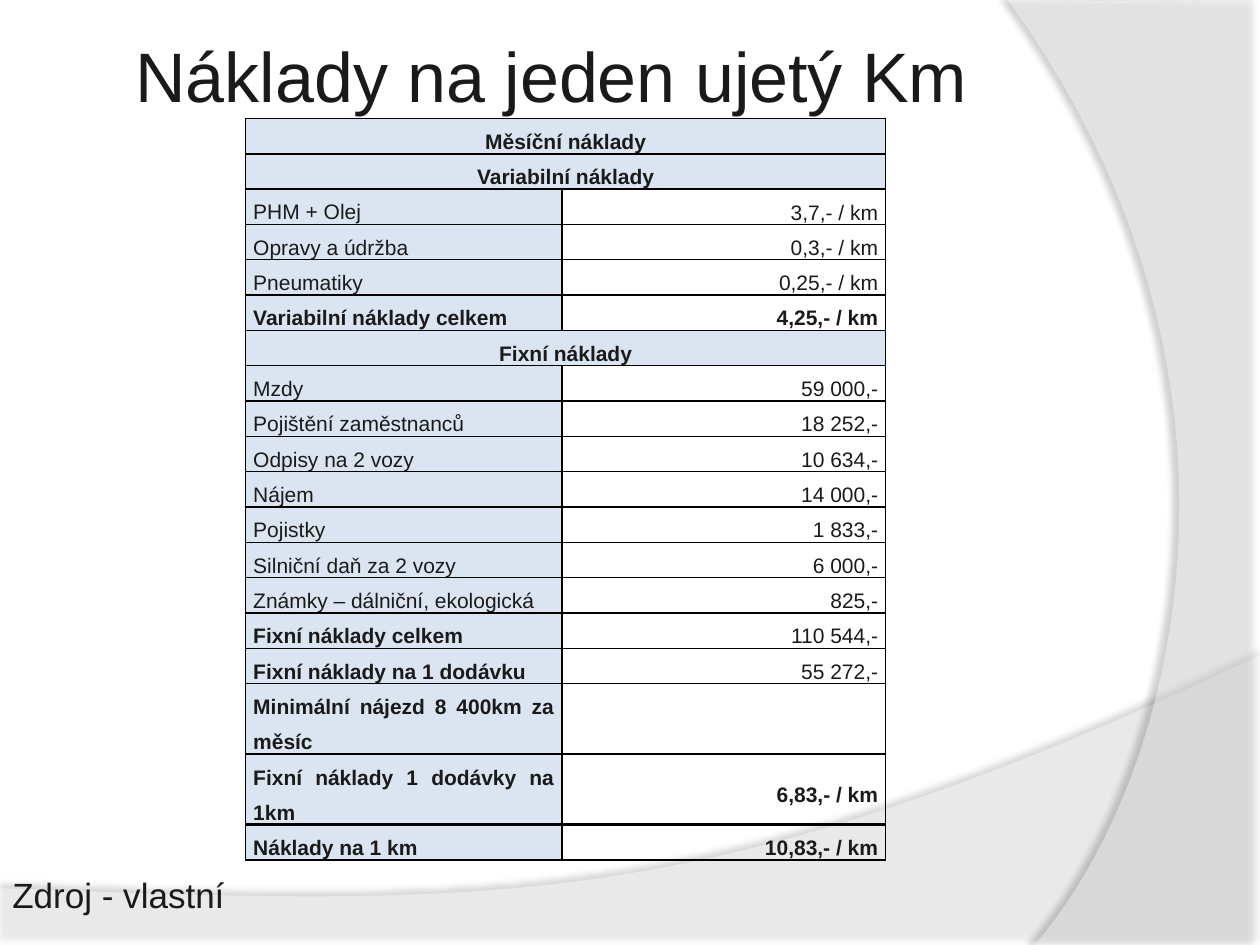
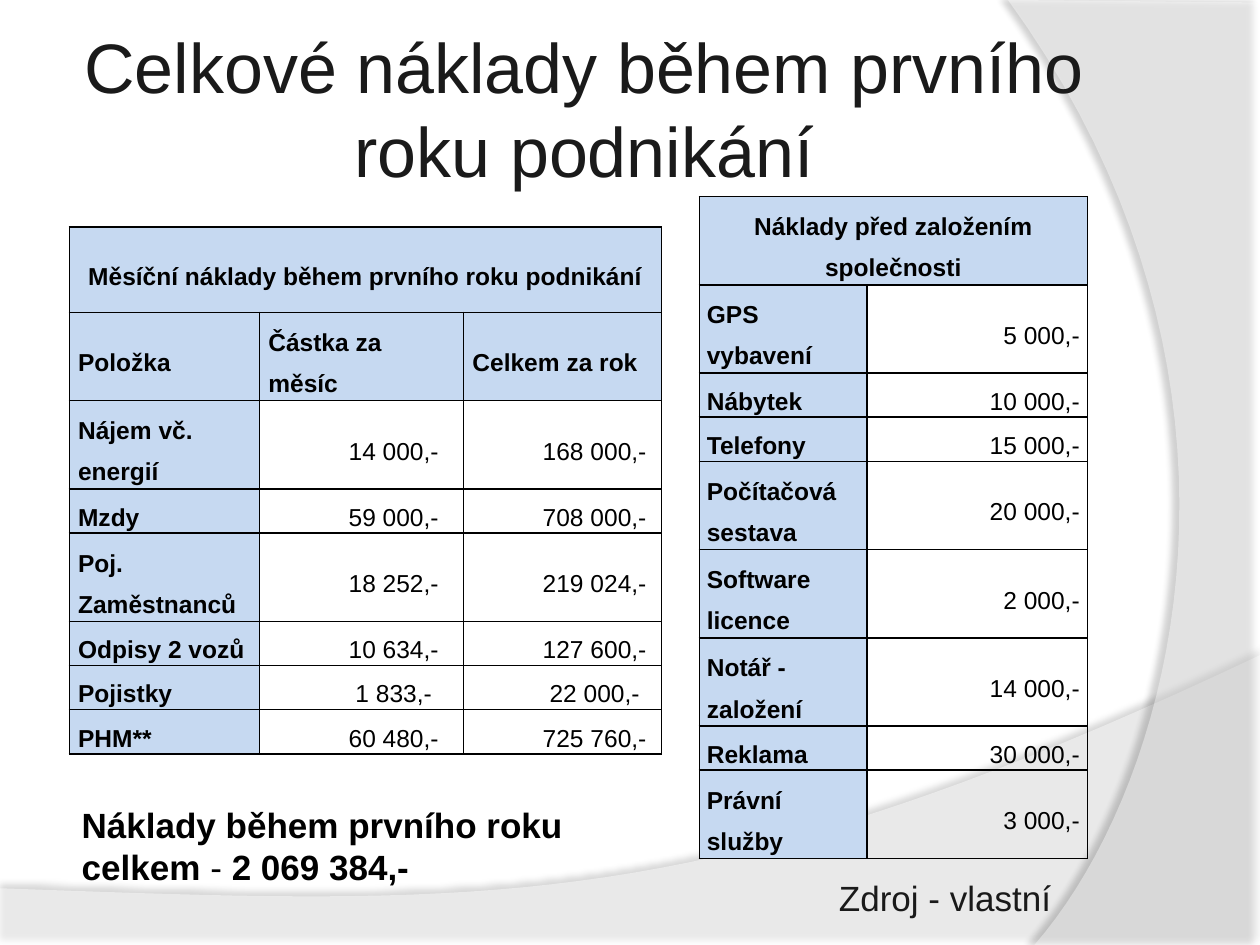
from dataclasses import dataclass

from lxml import etree
from pptx import Presentation
from pptx import util as u
from pptx.dml.color import RGBColor
from pptx.enum import text as t
from pptx.oxml import ns

FONT = "Arial"
INK = RGBColor(0x1A, 0x1A, 0x1A)
BLACK = RGBColor(0x00, 0x00, 0x00)
WHITE = RGBColor(0xFF, 0xFF, 0xFF)
PALE_BLUE = RGBColor(0xDB, 0xE5, 0xF1)
LIGHT_BLUE = RGBColor(0xC6, 0xD9, 0xF1)

LEFT, CENTER, RIGHT, JUSTIFY = (
    t.PP_ALIGN.LEFT, t.PP_ALIGN.CENTER, t.PP_ALIGN.RIGHT, t.PP_ALIGN.JUSTIFY)
TOP, MIDDLE = t.MSO_ANCHOR.TOP, t.MSO_ANCHOR.MIDDLE

SOURCE_NOTE = "Zdroj - vlastní"

# A row with one text is a heading across the whole table.
KM_COSTS = [
    ["Měsíční náklady"],
    ["Variabilní náklady"],
    ["PHM + Olej", "3,7,- / km"],
    ["Opravy a údržba", "0,3,- / km"],
    ["Pneumatiky", "0,25,- / km"],
    ["Variabilní náklady celkem", "4,25,- / km"],
    ["Fixní náklady"],
    ["Mzdy", "59 000,-"],
    ["Pojištění zaměstnanců", "18 252,-"],
    ["Odpisy na 2 vozy", "10 634,-"],
    ["Nájem", "14 000,-"],
    ["Pojistky", "1 833,-"],
    ["Silniční daň za 2 vozy", "6 000,-"],
    ["Známky – dálniční, ekologická", "825,-"],
    ["Fixní náklady celkem", "110 544,-"],
    ["Fixní náklady na 1 dodávku", "55 272,-"],
    ["Minimální nájezd 8 400km za měsíc", ""],
    ["Fixní náklady 1 dodávky na 1km", "6,83,- / km"],
    ["Náklady na 1 km", "10,83,- / km"],
]
YEAR_COSTS = [
    ["Měsíční náklady během prvního roku podnikání"],
    ["Položka", "Částka za měsíc", "Celkem za rok"],
    ["Nájem vč. energií", "14 000,-", "168 000,-"],
    ["Mzdy", "59 000,-", "708 000,-"],
    ["Poj. Zaměstnanců", "18 252,-", "219 024,-"],
    ["Odpisy 2 vozů", "10 634,-", "127 600,-"],
    ["Pojistky", "1 833,-", "22 000,-"],
    ["PHM**", "60 480,-", "725 760,-"],
]
STARTUP_COSTS = [
    ["Náklady před založením společnosti"],
    ["GPS vybavení", "5 000,-"],
    ["Nábytek", "10 000,-"],
    ["Telefony", "15 000,-"],
    ["Počítačová sestava", "20 000,-"],
    ["Software licence", "2 000,-"],
    ["Notář - založení", "14 000,-"],
    ["Reklama", "30 000,-"],
    ["Právní služby", "3 000,-"],
]


@dataclass
class TableStyle:
    size: int
    color: RGBColor
    fill: RGBColor
    margin: float
    label_align: t.PP_ALIGN
    label_anchor: t.MSO_ANCHOR
    value_align: t.PP_ALIGN
    value_indent: float = 0


KM_STYLE = TableStyle(12, INK, PALE_BLUE, 0.06, JUSTIFY, TOP, RIGHT)
YEAR_STYLE = TableStyle(14, BLACK, LIGHT_BLUE, 0.07, LEFT, MIDDLE, CENTER, 0.51)
STARTUP_STYLE = TableStyle(14, BLACK, LIGHT_BLUE, 0.06, LEFT, MIDDLE, RIGHT, 0.51)


def add_run(paragraph, text, size, color, bold=False):
    run = paragraph.add_run()
    run.text = text
    run.font.name = FONT
    run.font.size = u.Pt(size)
    run.font.bold = bold
    run.font.color.rgb = color


# Shared background
def curve(start, control_1, control_2, end, steps=40):
    """Points of a cubic curve, without its start."""
    points = []
    for step in range(1, steps + 1):
        k = step / steps
        weights = ((1 - k) ** 3, 3 * k * (1 - k) ** 2, 3 * k * k * (1 - k), k ** 3)
        corners = (start, control_1, control_2, end)
        points.append(tuple(sum(w * corner[axis] for w, corner in zip(weights, corners))
                            for axis in (0, 1)))
    return points


def add_swoosh(slide, points, opacity, shadow_opacity, distance, direction):
    (start, *others) = [(u.Inches(x), u.Inches(y)) for x, y in points]
    builder = slide.shapes.build_freeform(*start, scale=1.0)
    builder.add_line_segments(others, close=True)
    shape = builder.convert_to_shape()
    shape.shadow.inherit = False
    shape.line.fill.background()
    shape.fill.solid()
    shape.fill.fore_color.rgb = WHITE
    properties = shape.element.spPr
    set_opacity(properties.find(".//" + ns.qn("a:srgbClr")), opacity)
    shadow = etree.SubElement(
        properties.find(ns.qn("a:effectLst")), ns.qn("a:outerShdw"),
        blurRad=str(u.Pt(4)), dist=str(u.Pt(distance)), dir=str(direction * 60000),
        algn="ctr", rotWithShape="0")
    set_opacity(etree.SubElement(shadow, ns.qn("a:srgbClr"), val=str(BLACK)),
                shadow_opacity)
    return shape


def set_opacity(color_element, percent):
    etree.SubElement(color_element, ns.qn("a:alpha"), val=str(percent * 1000))


def move_background_to_layout(slide):
    wave = [(0, 7.05), (0, 7.5), (10, 7.5), (10, 5.2)]
    wave += curve(wave[-1], (5.59, 7.29), (3.91, 7.19), wave[0])
    arc = [(10, 0.02), (10, 7.5), (8.21, 7.5)]
    arc += curve(arc[-1], (9.35, 6.19), (10.18, 3), (8, 0))
    swooshes = [add_swoosh(slide, wave, 45, 35, 3.5, 270),
                add_swoosh(slide, arc, 40, 45, 4, 180)]
    layout_tree = slide.slide_layout.shapes.element
    for position, swoosh in enumerate(swooshes, start=2):
        layout_tree.insert(position, swoosh.element)


# Text
def add_title_slide(presentation, title, left, top, width, height):
    slide = presentation.slides.add_slide(presentation.slide_layouts[5])
    shape = slide.shapes.title
    shape.left, shape.top = u.Inches(left), u.Inches(top)
    shape.width, shape.height = u.Inches(width), u.Inches(height)
    frame = shape.text_frame
    frame.word_wrap = True
    frame.auto_size = t.MSO_AUTO_SIZE.NONE
    frame.vertical_anchor = MIDDLE
    frame.margin_left = frame.margin_right = u.Inches(0.05)
    frame.margin_top = frame.margin_bottom = u.Inches(0.05)
    paragraph = frame.paragraphs[0]
    paragraph.alignment = CENTER
    add_run(paragraph, title, 40, INK)
    return slide


def add_note(slide, left, top, width, height, runs, color=INK):
    box = slide.shapes.add_textbox(*map(u.Inches, (left, top, width, height)))
    box.text_frame.word_wrap = True
    for text, bold in runs:
        add_run(box.text_frame.paragraphs[0], text, 20, color, bold)


# Tables
def set_borders(cell, top=1, bottom=1):
    properties = cell._tc.get_or_add_tcPr()
    for side, width in (("L", 1), ("R", 1), ("T", top), ("B", bottom)):
        line = etree.SubElement(properties, ns.qn("a:ln" + side), w=str(u.Pt(width)))
        fill = etree.SubElement(line, ns.qn("a:solidFill"))
        etree.SubElement(fill, ns.qn("a:srgbClr"), val=str(BLACK))


def fill_cell(cell, text, style, is_label, align, bold):
    cell.margin_left = cell.margin_right = u.Inches(style.margin)
    cell.margin_top = cell.margin_bottom = 0
    if is_label:
        cell.fill.solid()
        cell.fill.fore_color.rgb = style.fill
    else:
        cell.fill.background()
    if not text:
        return
    paragraph = cell.text_frame.paragraphs[0]
    paragraph.alignment = align
    paragraph.line_spacing = 1.5
    if not is_label and style.value_indent:
        paragraph._p.get_or_add_pPr().set("indent", str(u.Inches(style.value_indent)))
    add_run(paragraph, text, style.size, style.color, bold)


def add_cost_table(slide, left, top, widths, heights, rows, style, header_rows=1,
                   plain_labels=(), bold_values=(), thick_line=None):
    """Draw rows of costs; thick_line is the row above which the rule is heavy."""
    frame = slide.shapes.add_table(
        len(rows), len(widths), u.Inches(left), u.Inches(top),
        u.Inches(sum(widths)), u.Inches(sum(heights)))
    table = frame.table
    table.first_row = table.horz_banding = False
    for column, width in zip(table.columns, widths):
        column.width = u.Inches(width)
    for row, height in zip(table.rows, heights):
        row.height = u.Inches(height)
    for r, texts in enumerate(rows):
        spans = len(texts) == 1
        for c in range(len(widths)):
            cell = table.cell(r, c)
            set_borders(cell, top=2.25 if r == thick_line else 1,
                        bottom=2.25 if r + 1 == thick_line else 1)
            is_label = spans or c == 0 or r < header_rows
            if is_label:
                align = CENTER if spans else style.label_align
                cell.vertical_anchor = MIDDLE if spans else style.label_anchor
                bold = r not in plain_labels
            else:
                align = style.value_align
                cell.vertical_anchor = MIDDLE
                bold = r in bold_values
            text = texts[c] if c < len(texts) else ""
            fill_cell(cell, text, style, is_label, align, bold)
        if spans:
            table.cell(r, 0).merge(table.cell(r, len(widths) - 1))


def line_heights(row_count, line, two_line_rows):
    return [line * 2 if r in two_line_rows else line for r in range(row_count)]


def main():
    presentation = Presentation()
    presentation.slide_width = u.Inches(10)
    presentation.slide_height = u.Inches(7.5)

    # Costs per kilometre
    slide = add_title_slide(presentation, "Náklady na jeden ujetý Km",
                            0.94, 0.08, 6.87, 1.02)
    move_background_to_layout(slide)
    add_cost_table(slide, 1.95, 0.94, [2.51, 2.57],
                   line_heights(len(KM_COSTS), 0.28, {16, 17}), KM_COSTS, KM_STYLE,
                   plain_labels={2, 3, 4, *range(7, 14)},
                   bold_values={5, 17, 18}, thick_line=18)
    add_note(slide, 0, 6.88, 2.03, 0.44, [(SOURCE_NOTE, False)])

    # First-year costs
    slide = add_title_slide(presentation, "Celkové náklady během prvního roku podnikání",
                            0.55, 0.23, 8.17, 1.25)
    add_note(slide, 6.56, 6.91, 2.03, 0.44, [(SOURCE_NOTE, False)])
    add_note(slide, 0.55, 6.33, 5, 0.77,
             [("Náklady během prvního roku celkem ", True), ("- ", False),
              ("2 069 384,-", True)], BLACK)
    add_cost_table(slide, 0.55, 1.8, [1.51, 1.62, 1.57],
                   [0.68] + line_heights(len(YEAR_COSTS) - 1, 0.35, {0, 1, 3}),
                   YEAR_COSTS, YEAR_STYLE, header_rows=2)
    add_cost_table(slide, 5.55, 1.56, [1.33, 1.75],
                   line_heights(len(STARTUP_COSTS), 0.35, {0, 1, 4, 5, 6, 8}),
                   STARTUP_COSTS, STARTUP_STYLE)

    presentation.save("out.pptx")


if __name__ == "__main__":
    main()
